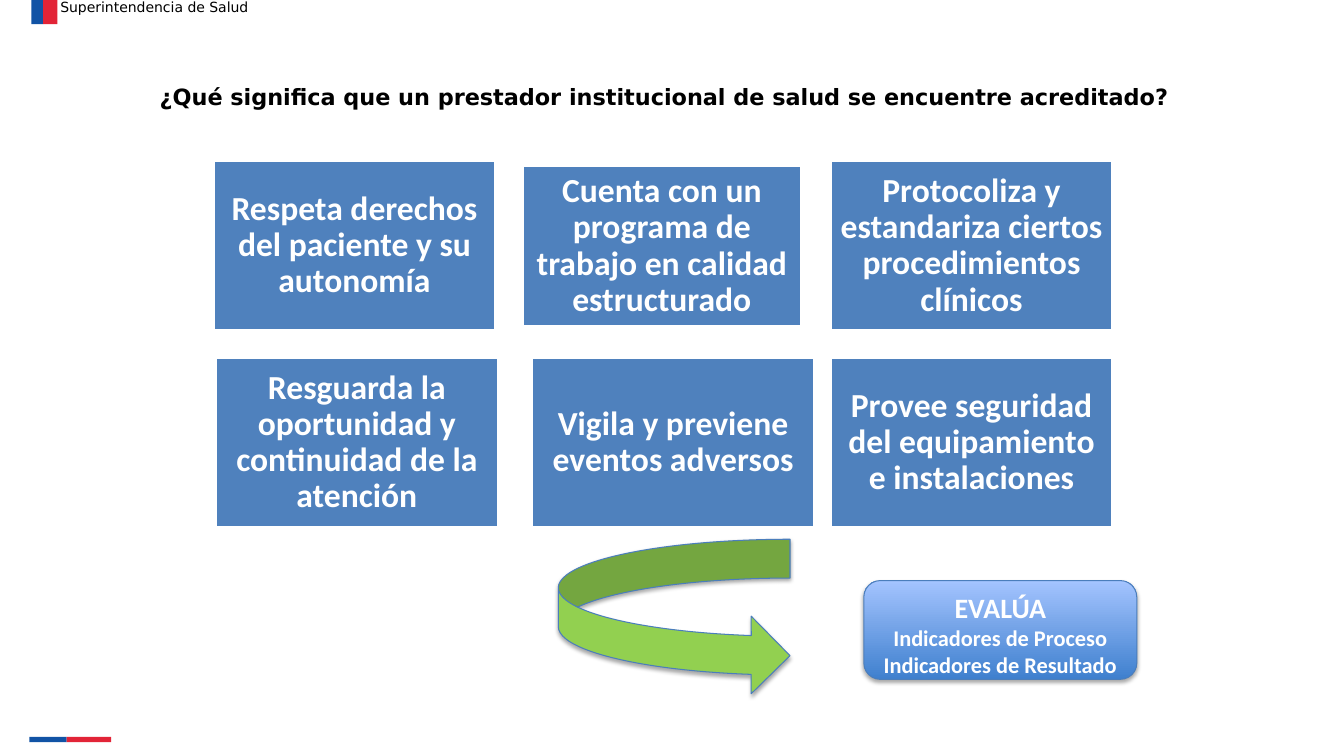
import pptx
import pptx.util
import pptx.dml.color
import pptx.enum.shapes
import pptx.enum.text
import pptx.oxml
import pptx.oxml.ns

Cm = pptx.util.Cm
Pt = pptx.util.Pt
Kind = pptx.enum.shapes.MSO_SHAPE
Align = pptx.enum.text.PP_ALIGN
Anchor = pptx.enum.text.MSO_ANCHOR
rgb = pptx.dml.color.RGBColor.from_string


class Theme:
    blue, red = rgb("1153A5"), rgb("E22437")
    card, green, edge = rgb("4F81BD"), rgb("92D050"), rgb("4B7EBC")
    deep, pale = rgb("3F80CE"), rgb("A4C4FF")
    white, black = rgb("FFFFFF"), rgb("000000")
    body, head = "Calibri", "DejaVu Sans"
    small, mid, large, big = Pt(10), Pt(16), Pt(20), Pt(24)


SHADOW = (
    '<a:outerShdw %s blurRad="39370" dist="22860" dir="5400000" rotWithShape="0">'
    '<a:srgbClr val="000000"><a:alpha val="35000"/></a:srgbClr></a:outerShdw>'
    % pptx.oxml.ns.nsdecls("a")
)

deck = pptx.Presentation()
deck.slide_width, deck.slide_height = Cm(33.87), Cm(19.05)
slide = deck.slides.add_slide(deck.slide_layouts[6])


def write(frame, text, size=Theme.big, font=Theme.body, color=Theme.white,
          bold=True, align=Align.CENTER, anchor=Anchor.MIDDLE, space=1.0,
          wrap=True, first=True):
    frame.word_wrap = wrap
    frame.vertical_anchor = anchor
    para = frame.paragraphs[0] if first else frame.add_paragraph()
    para.alignment, para.line_spacing = align, space
    run = para.add_run()
    run.text = text
    run.font.name, run.font.size, run.font.bold = font, size, bold
    run.font.color.rgb = color


def draw(kind, left, top, width, height, fill=None, line=None, weight=0.75, shade=False):
    shape = slide.shapes.add_shape(kind, Cm(left), Cm(top), Cm(width), Cm(height))
    shape.shadow.inherit = False
    if shade:
        effects = shape._element.spPr.find(pptx.oxml.ns.qn("a:effectLst"))
        effects.append(pptx.oxml.parse_xml(SHADOW))
    if fill is not None:
        shape.fill.solid()
        shape.fill.fore_color.rgb = fill
    if line is None:
        shape.line.fill.background()
    else:
        shape.line.color.rgb = line
        shape.line.width = Pt(weight)
    return shape


# Two-colour bars at the top and bottom edges
for left, top, width, height, fill in (
    (0.79, 0, 0.3, 0.61, Theme.blue),
    (1.09, 0, 0.36, 0.61, Theme.red),
    (0.74, 18.57, 0.94, 0.13, Theme.blue),
    (1.68, 18.57, 1.12, 0.13, Theme.red),
):
    draw(Kind.RECTANGLE, left, top, width, height, fill)

# Header and title
header = slide.shapes.add_textbox(Cm(1.27), Cm(-0.25), Cm(10.85), Cm(0.86))
write(header.text_frame, "Superintendencia de Salud", size=Theme.small,
      font=Theme.head, color=Theme.black, bold=False, align=Align.LEFT)
title = slide.shapes.add_textbox(Cm(3.71), Cm(1.98), Cm(26.06), Cm(0.94))
write(title.text_frame,
      "¿Qué significa que un prestador institucional de salud se encuentre acreditado?",
      size=Theme.mid, font=Theme.head, color=Theme.black, anchor=Anchor.TOP, wrap=False)

# Six cards
WIDE, HIGH = 7.11, 4.27
UPPER, LOWER = 4.06, 9.02
RIGHT = 20.93
for left, top, width, height, text in (
    (5.38, UPPER, WIDE, HIGH, "Respeta derechos del paciente y su autonomía"),
    (13.16, 4.17, 7.04, 4.06, "Cuenta con un programa de trabajo en calidad estructurado"),
    (RIGHT, UPPER, WIDE, HIGH, "Protocoliza y estandariza ciertos procedimientos clínicos"),
    (5.44, LOWER, WIDE, HIGH, "Resguarda la oportunidad y continuidad de la atención"),
    (13.41, LOWER, WIDE, HIGH, "Vigila y previene eventos adversos"),
    (RIGHT, LOWER, WIDE, HIGH, "Provee seguridad del equipamiento e instalaciones"),
):
    card = draw(Kind.RECTANGLE, left, top, width, height, Theme.card, Theme.white, 2)
    frame = card.text_frame
    frame.margin_left = frame.margin_right = Cm(0.25)
    frame.margin_top = frame.margin_bottom = Cm(0.25)
    write(frame, text, space=0.9)

# Result box with gradient
result = draw(Kind.ROUNDED_RECTANGLE, 21.77, 14.63, 6.88, 2.49, line=Theme.edge, shade=True)
result.fill.gradient()
result.fill.gradient_angle = 90
for stop, color in zip(result.fill.gradient_stops, (Theme.deep, Theme.pale)):
    stop.color.rgb = color
for row, (text, size) in enumerate((
    ("EVALÚA", Theme.large),
    ("Indicadores de Proceso", Theme.mid),
    ("Indicadores de Resultado", Theme.mid),
)):
    write(result.text_frame, text, size=size, anchor=Anchor.TOP, first=row == 0)

# Curved arrow leading to the result
draw(Kind.CURVED_RIGHT_ARROW, 14.07, 13.59, 5.84, 3.91, Theme.green, Theme.edge, shade=True)

deck.save("out.pptx")
